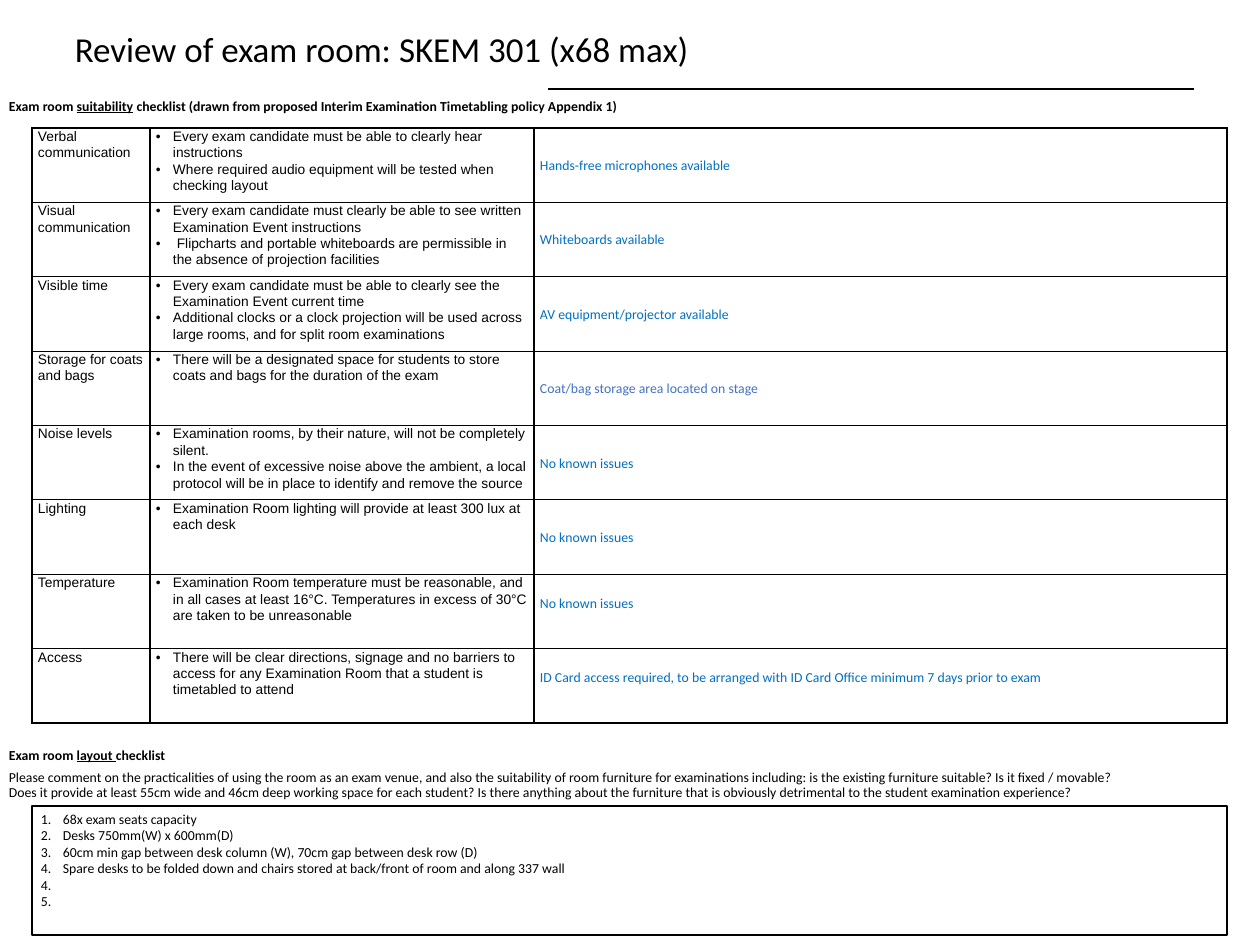
"""Build the exam room review slide with its suitability and layout checklists."""
from lxml import etree
from pptx import Presentation
from pptx.dml.color import RGBColor
from pptx.enum.shapes import MSO_CONNECTOR, MSO_SHAPE
from pptx.enum.text import MSO_ANCHOR
from pptx.oxml.ns import qn
from pptx.util import Pt

PX = 10160
BLACK = RGBColor(0, 0, 0)
WHITE = RGBColor(255, 255, 255)
BLUE = RGBColor(0x00, 0x70, 0xC0)
SLATE = RGBColor(0x44, 0x72, 0xC4)
TOP, MIDDLE = MSO_ANCHOR.TOP, MSO_ANCHOR.MIDDLE
RECT, STRAIGHT = MSO_SHAPE.RECTANGLE, MSO_CONNECTOR.STRAIGHT

CHECKS = [
    ("Verbal communication",
     ["Every exam candidate must be able to clearly hear instructions",
      "Where required audio equipment will be tested when checking layout"],
     "Hands-free microphones available", BLUE, 0),
    ("Visual communication",
     ["Every exam candidate must clearly be able to see written Examination Event instructions",
      " Flipcharts and portable whiteboards are permissible in the absence of projection facilities"],
     "Whiteboards available", BLUE, 0),
    ("Visible time",
     ["Every exam candidate must be able to clearly see the Examination Event current time",
      "Additional clocks or a clock projection will be used across large rooms, "
      "and for split room examinations"],
     "AV equipment/projector available", BLUE, 0),
    ("Storage for coats and bags",
     ["There will be a designated space for students to store coats and bags "
      "for the duration of the exam"],
     "Coat/bag storage area located on stage", SLATE, 0),
    ("Noise levels",
     ["Examination rooms, by their nature, will not be completely silent.",
      "In the event of excessive noise above the ambient, a local protocol "
      "will be in place to identify and remove the source"],
     "No known issues", BLUE, 0),
    ("Lighting",
     ["Examination Room lighting will provide at least 300 lux at each desk"],
     "No known issues", BLUE, 0),
    ("Temperature",
     ["Examination Room temperature must be reasonable, and in all cases at least 16°C. "
      "Temperatures in excess of 30°C are taken to be unreasonable"],
     "No known issues", BLUE, 17),
    ("Access",
     ["There will be clear directions, signage and no barriers to access for any "
      "Examination Room that a student is timetabled to attend"],
     "ID Card access required, to be arranged with ID Card Office minimum 7 days prior to exam",
     BLUE, 17),
]
GUIDANCE = (
    "Please comment on the practicalities of using the room as an exam venue, and also the "
    "suitability of room furniture for examinations including: is the existing furniture "
    "suitable? Is it fixed / movable? Does it provide at least 55cm wide and 46cm deep working "
    "space for each student? Is there anything about the furniture that is obviously "
    "detrimental to the student examination experience?")
NOTES = [
    "68x exam seats capacity",
    "Desks 750mm(W) x 600mm(D)",
    "60cm min gap between desk column (W), 70cm gap between desk row (D)",
    "Spare desks to be folded down and chairs stored at back/front of room and along 337 wall",
    "4.",
    "5.",
]


def add_run(p, text, name="Calibri", size=11, color=BLACK, bold=False, underline=False):
    r = p.add_run()
    r.text = text
    r.font.name, r.font.size, r.font.bold = name, Pt(size), bold
    r.font.underline = underline
    r.font.color.rgb = color


def add_bullet(p, indent, tag, **attrs):
    pPr = p._p.get_or_add_pPr()
    pPr.set("marL", str(indent * PX))
    pPr.set("indent", str(-indent * PX))
    etree.SubElement(pPr, qn("a:buFont"), typeface="Arial" if tag == "a:buChar" else "+mj-lt")
    etree.SubElement(pPr, qn(tag), **attrs)


prs = Presentation()
prs.slide_width, prs.slide_height = 1260 * PX, 945 * PX
s = prs.slides.add_slide(prs.slide_layouts[6])

headings = [
    (95, "suitability",
     " checklist (drawn from proposed Interim Examination Timetabling policy Appendix 1)"),
    (744, "layout ", "checklist"),
]
for top, key, rest in headings:
    sp = s.shapes.add_textbox(0, top * PX, 1141 * PX, 30 * PX)
    tf = sp.text_frame
    tf.word_wrap = True
    p = tf.paragraphs[0]
    p.line_spacing = 0.9
    add_run(p, "Exam room ", bold=True)
    add_run(p, key, bold=True, underline=True)
    add_run(p, rest, bold=True)

sp.height = 62 * PX
p = tf.add_paragraph()
p.line_spacing = 0.9
p.space_before = Pt(6)
add_run(p, GUIDANCE)

frame = s.shapes.add_table(len(CHECKS), 3, 32 * PX, 128 * PX, 1195 * PX, 595 * PX)
table = frame.table
table.first_row = table.horz_banding = False
for col, width in zip(table.columns, (118, 384, 693)):
    col.width = width * PX
for row, (topic, rules, finding, color, lift) in zip(table.rows, CHECKS):
    row.height = 595 * PX // len(CHECKS)
    columns = [([topic], "Arial", BLACK), (rules, "Arial", BLACK), ([finding], "Calibri", color)]
    for i, (cell, (lines, name, ink)) in enumerate(zip(row.cells, columns)):
        cell.margin_left = cell.margin_right = 6 * PX
        cell.margin_top = 0
        cell.margin_bottom = lift * PX if i == 2 else 0
        cell.vertical_anchor = MIDDLE if i == 2 else TOP
        tcPr = cell._tc.get_or_add_tcPr()
        for side in ("a:lnL", "a:lnR", "a:lnT", "a:lnB"):
            ln = etree.SubElement(tcPr, qn(side), w=str(Pt(1)))
            fill = etree.SubElement(ln, qn("a:solidFill"))
            etree.SubElement(fill, qn("a:srgbClr"), val=str(BLACK))
        cell.fill.background()
        tf = cell.text_frame
        for n, line in enumerate(lines):
            p = tf.add_paragraph() if n else tf.paragraphs[0]
            if i == 1:
                add_bullet(p, 17, "a:buChar", char="•")
            p.line_spacing = 1.07
            add_run(p, line, name, color=ink)

sp = s.shapes.add_shape(RECT, 32 * PX, 806 * PX, 1195 * PX, 129 * PX)
sp.shadow.inherit = False
sp.fill.solid()
sp.fill.fore_color.rgb = WHITE
sp.line.color.rgb = BLACK
sp.line.width = Pt(1)
tf = sp.text_frame
tf.word_wrap = True
tf.vertical_anchor = TOP
for n, note in enumerate(NOTES):
    p = tf.add_paragraph() if n else tf.paragraphs[0]
    p._p.get_or_add_pPr().set("algn", "l")
    if n < 4:
        add_bullet(p, 22, "a:buAutoNum", type="arabicPeriod")
    add_run(p, note)

rule = s.shapes.add_connector(STRAIGHT, 1194 * PX, 89 * PX, 548 * PX, 89 * PX)
rule.line.color.rgb = BLACK
rule.line.width = Pt(1)
etree.SubElement(rule._element.spPr, qn("a:effectLst"))

sp = s.shapes.add_textbox(66 * PX, 23 * PX, 1129 * PX, 94 * PX)
tf = sp.text_frame
tf.word_wrap = True
add_run(tf.paragraphs[0], "Review of exam room: SKEM 301 (x68 max)", size=28)

prs.save("out.pptx")
